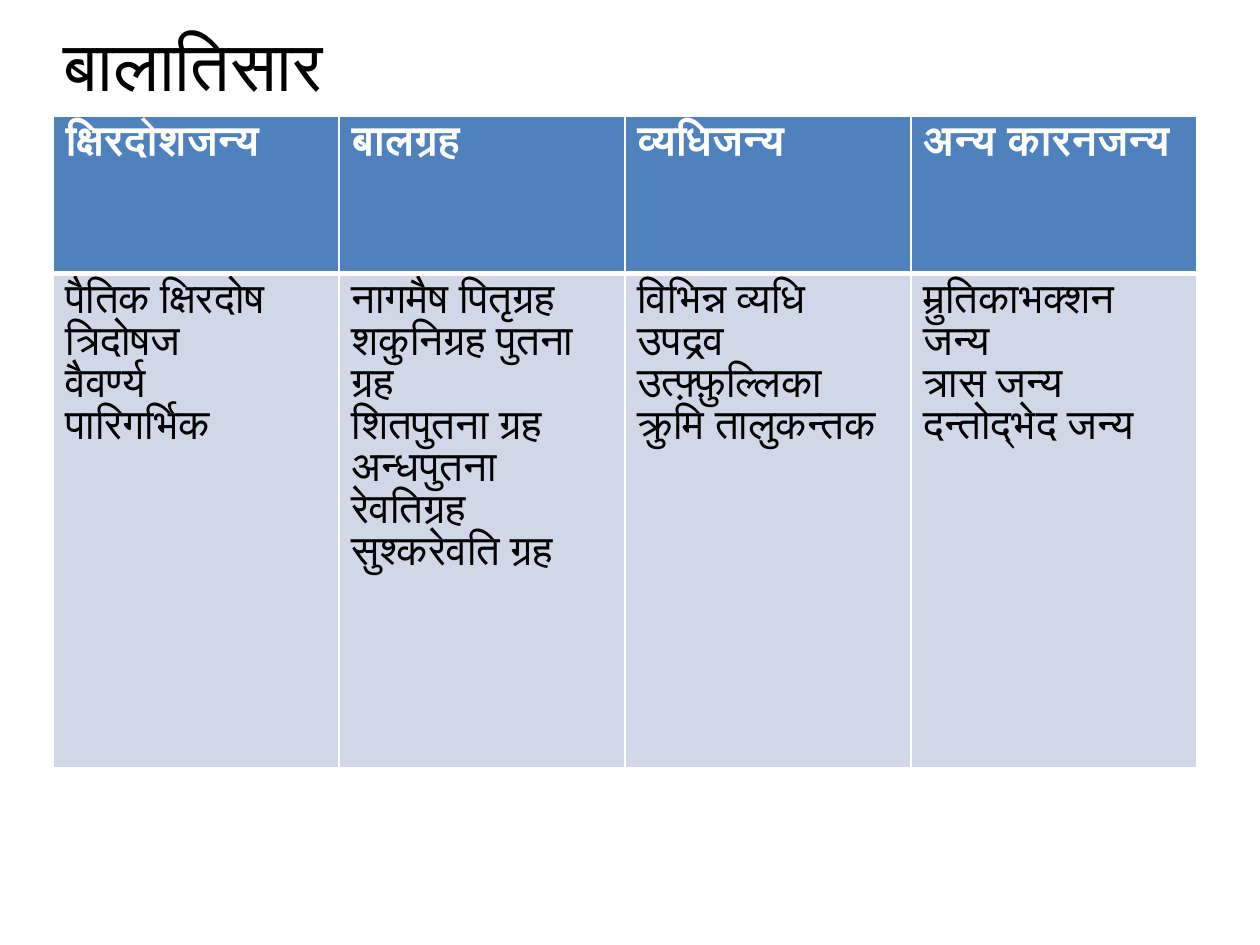
import pptx
import pptx.util
import pptx.dml.color
import pptx.oxml
from dataclasses import dataclass
from pptx.util import Inches


@dataclass(frozen=True)
class Theme:
    head: str = "4F81BD"
    body: str = "D0D8E8"
    white: str = "FFFFFF"
    black: str = "000000"
    title: int = 40
    cell: int = 24


theme = Theme()
rgb = pptx.dml.color.RGBColor.from_string


def write(frame, lines, size, color, font="Calibri", bold=False):
    """Fill a text frame with one paragraph per line."""
    for i, line in enumerate(lines):
        para = frame.paragraphs[0] if i == 0 else frame.add_paragraph()
        run = para.add_run()
        run.text = line
        run.font.name = font
        run.font.size = pptx.util.Pt(size)
        run.font.bold = bold
        run.font.color.rgb = rgb(color)


def edge(cell, side, width):
    """Draw one cell border; side is L, R, T or B."""
    cell._tc.get_or_add_tcPr().append(pptx.oxml.parse_xml(
        f'<a:ln{side} xmlns:a="http://schemas.openxmlformats.org/drawingml/2006/main"'
        f' w="{pptx.util.Pt(width)}"><a:solidFill><a:srgbClr val="{theme.white}"/>'
        f'</a:solidFill></a:ln{side}>'))


deck = pptx.Presentation()
deck.slide_width, deck.slide_height = Inches(10), Inches(7.5)
slide = deck.slides.add_slide(deck.slide_layouts[6])

title = slide.shapes.add_textbox(
    Inches(0.5), Inches(0.17), Inches(6.01), Inches(0.67)).text_frame
title.word_wrap = True
title.margin_left = title.margin_right = title.margin_top = title.margin_bottom = 0
write(title, ["बालातिसार"], theme.title, theme.black, font="Arial")

groups = {
    "क्षिरदोशजन्य": ["पैतिक क्षिरदोष", "त्रिदोषज", "वैवर्ण्य", "पारिगर्भिक"],
    "बालग्रह": ["नागमैष पितृग्रह", "शकुनिग्रह पुतना ग्रह", "शितपुतना ग्रह",
                "अन्धपुतना", "रेवतिग्रह", "सुश्करेवति ग्रह"],
    "व्यधिजन्य": ["विभिन्न व्यधि उपद्रव", "उत्फ़्फ़ुल्लिका क्रुमि तालुकन्तक"],
    "अन्य कारनजन्य": ["म्रुतिकाभक्शन जन्य", "त्रास जन्य", "दन्तोद्भेद जन्य"],
}
grid = slide.shapes.add_table(
    2, len(groups), Inches(0.42), Inches(0.92), Inches(9.08), Inches(5.17)).table
grid.rows[0].height, grid.rows[1].height = Inches(1.25), Inches(3.92)

for col, (name, items) in enumerate(groups.items()):
    grid.columns[col].width = Inches(2.27)
    for row, lines in enumerate([[name], items]):
        cell = grid.cell(row, col)
        top = row == 0
        for side in "LRTB":
            shared = side == ("B" if top else "T")
            edge(cell, side, 3 if shared else 1)
        cell.fill.solid()
        cell.fill.fore_color.rgb = rgb(theme.head if top else theme.body)
        write(cell.text_frame, lines, theme.cell,
              theme.white if top else theme.black, bold=top)

deck.save("out.pptx")
